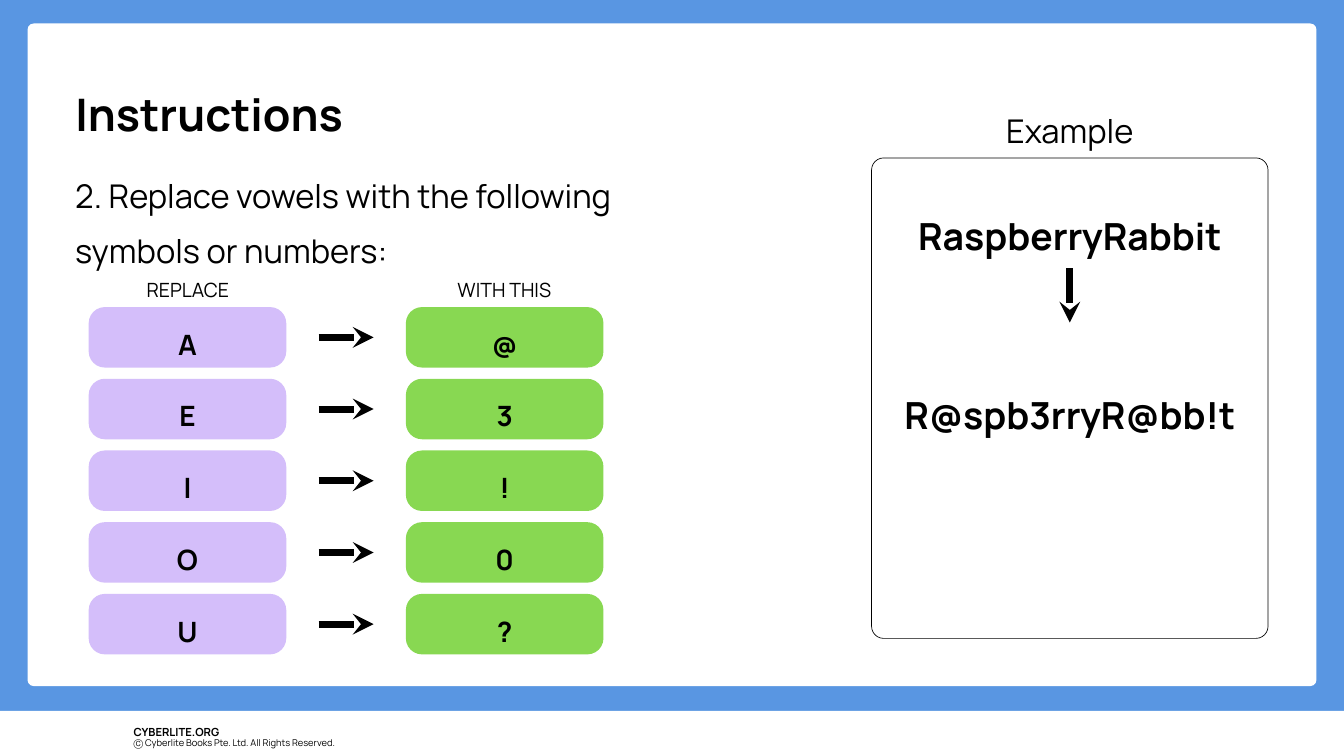
from dataclasses import dataclass

import pptx
import pptx.dml.color
import pptx.enum.shapes
import pptx.enum.text
import pptx.oxml
import pptx.oxml.ns
import pptx.util

RGBColor = pptx.dml.color.RGBColor
Inches = pptx.util.Inches
Pt = pptx.util.Pt
Shapes = pptx.enum.shapes.MSO_SHAPE
Align = pptx.enum.text.PP_ALIGN
Anchor = pptx.enum.text.MSO_ANCHOR

BLUE = RGBColor(0x59, 0x96, 0xE2)
WHITE = RGBColor(0xFF, 0xFF, 0xFF)
BLACK = RGBColor(0x00, 0x00, 0x00)
LILAC = RGBColor(0xD4, 0xBE, 0xFA)
GREEN = RGBColor(0x88, 0xD8, 0x52)
FONT = "Manrope"

PILL_WIDTH, PILL_HEIGHT, PILL_RADIUS = 2.94, 0.9, 0.24
FIRST_ROW_TOP, ROW_PITCH = 4.57, 1.067
REPLACE_LEFT, WITH_LEFT = 1.32, 6.04
ARROW_START, ARROW_END = 4.74, 5.56


@dataclass(frozen=True)
class Box:
    left: float
    top: float
    width: float
    height: float


@dataclass(frozen=True)
class Label:
    text: str
    box: Box
    size: float
    bold: bool = False
    align: Align = Align.LEFT


@dataclass(frozen=True)
class Swap:
    vowel: str
    symbol: str


LABELS = [
    Label("CYBERLITE.ORG", Box(1.99, 10.72, 1.85, 0.23), 12, bold=True),
    Label("Ⓒ Cyberlite Books Pte. Ltd. All Rights Reserved.",
          Box(1.99, 10.9, 4.63, 0.17), 10),
    Label("2. Replace vowels with the following symbols or numbers:",
          Box(1.12, 2.38, 9.64, 1.36), 35),
    Label("Example", Box(14.82, 1.42, 2.2, 0.68), 35, align=Align.CENTER),
    Label("REPLACE", Box(2.1, 3.99, 1.39, 0.41), 21, align=Align.CENTER),
    Label("WITH THIS", Box(6.49, 3.99, 2.03, 0.41), 21, align=Align.CENTER),
]
SWAPS = [Swap("A", "@"), Swap("E", "3"), Swap("I", "!"), Swap("O", "0"), Swap("U", "?")]


def place(shape, box: Box) -> None:
    shape.left, shape.top = Inches(box.left), Inches(box.top)
    shape.width, shape.height = Inches(box.width), Inches(box.height)


def prepare_frame(frame, inset: float, anchor: Anchor) -> None:
    frame.word_wrap = True
    frame.auto_size = pptx.enum.text.MSO_AUTO_SIZE.NONE
    frame.vertical_anchor = anchor
    frame.margin_left = frame.margin_right = Inches(inset)
    frame.margin_top = frame.margin_bottom = Inches(inset)


def write(paragraph, text: str, size: float, bold: bool, align: Align) -> None:
    paragraph.alignment = align
    paragraph.line_spacing = 1.4
    run = paragraph.add_run()
    run.text = text
    run.font.name = FONT
    run.font.size = Pt(size)
    run.font.bold = bold
    run.font.color.rgb = BLACK


def add_panel(slide, box: Box, fill: RGBColor, radius: float = 0):
    """Add a filled rectangle without outline, rounded when a radius is given."""
    kind = Shapes.ROUNDED_RECTANGLE if radius else Shapes.RECTANGLE
    shape = slide.shapes.add_shape(kind, 0, 0, 0, 0)
    place(shape, box)
    if radius:
        shape.adjustments[0] = radius / min(box.width, box.height)
    shape.shadow.inherit = False
    shape.fill.solid()
    shape.fill.fore_color.rgb = fill
    shape.line.fill.background()
    return shape


def add_label(slide, label: Label) -> None:
    shape = slide.shapes.add_textbox(0, 0, 0, 0)
    place(shape, label.box)
    prepare_frame(shape.text_frame, 0, Anchor.TOP)
    write(shape.text_frame.paragraphs[0], label.text, label.size, label.bold, label.align)


def add_pill(slide, left: float, top: float, text: str, fill: RGBColor) -> None:
    shape = add_panel(slide, Box(left, top, PILL_WIDTH, PILL_HEIGHT), fill, PILL_RADIUS)
    prepare_frame(shape.text_frame, 0.06, Anchor.MIDDLE)
    write(shape.text_frame.paragraphs[0], text, 30, True, Align.CENTER)


def add_arrow(slide, x1: float, y1: float, x2: float, y2: float) -> None:
    arrow = slide.shapes.add_connector(
        pptx.enum.shapes.MSO_CONNECTOR.STRAIGHT,
        Inches(x1), Inches(y1), Inches(x2), Inches(y2))
    arrow.line.color.rgb = BLACK
    arrow.line.width = Pt(7.5)
    namespace = pptx.oxml.ns.nsdecls("a")
    arrow.line._get_or_add_ln().append(
        pptx.oxml.parse_xml(f'<a:tailEnd {namespace} type="stealth"/>'))
    arrow.element.spPr.append(pptx.oxml.parse_xml(f"<a:effectLst {namespace}/>"))


def add_title(slide, page) -> None:
    title = slide.shapes.title
    page.element.addnext(title.element)  # bring the title in front of the page
    place(title, Box(1.12, 0.97, 9.64, 0.95))
    prepare_frame(title.text_frame, 0, Anchor.TOP)
    write(title.text_frame.paragraphs[0], "Instructions", 48, True, Align.LEFT)


def add_example(slide) -> None:
    panel = add_panel(slide, Box(12.97, 2.35, 5.9, 7.15), WHITE, 0.18)
    panel.line.color.rgb = BLACK
    panel.line.width = Pt(0.75)
    frame = panel.text_frame
    prepare_frame(frame, 0.06, Anchor.TOP)
    frame.margin_top = Inches(0.5)
    write(frame.paragraphs[0], "RaspberryRabbit", 40, True, Align.CENTER)
    result = frame.add_paragraph()
    result.space_before = Pt(125)
    write(result, "R@spb3rryR@bb!t", 40, True, Align.CENTER)
    add_arrow(slide, 15.92, 3.99, 15.92, 4.8)


def main() -> None:
    presentation = pptx.Presentation()
    presentation.slide_width, presentation.slide_height = Inches(20), Inches(11.25)
    slide = presentation.slides.add_slide(presentation.slide_layouts.get_by_name("Title Only"))
    slide.background.fill.solid()
    slide.background.fill.fore_color.rgb = BLUE

    add_panel(slide, Box(0, 10.58, 20, 0.67), WHITE)
    page = add_panel(slide, Box(0.41, 0.35, 19.18, 9.86), WHITE, 0.09)
    add_title(slide, page)
    add_example(slide)
    for label in LABELS:
        add_label(slide, label)
    for row, swap in enumerate(SWAPS):
        top = FIRST_ROW_TOP + row * ROW_PITCH
        middle = top + PILL_HEIGHT / 2
        add_pill(slide, REPLACE_LEFT, top, swap.vowel, LILAC)
        add_arrow(slide, ARROW_START, middle, ARROW_END, middle)
        add_pill(slide, WITH_LEFT, top, swap.symbol, GREEN)

    presentation.save("out.pptx")


if __name__ == "__main__":
    main()
